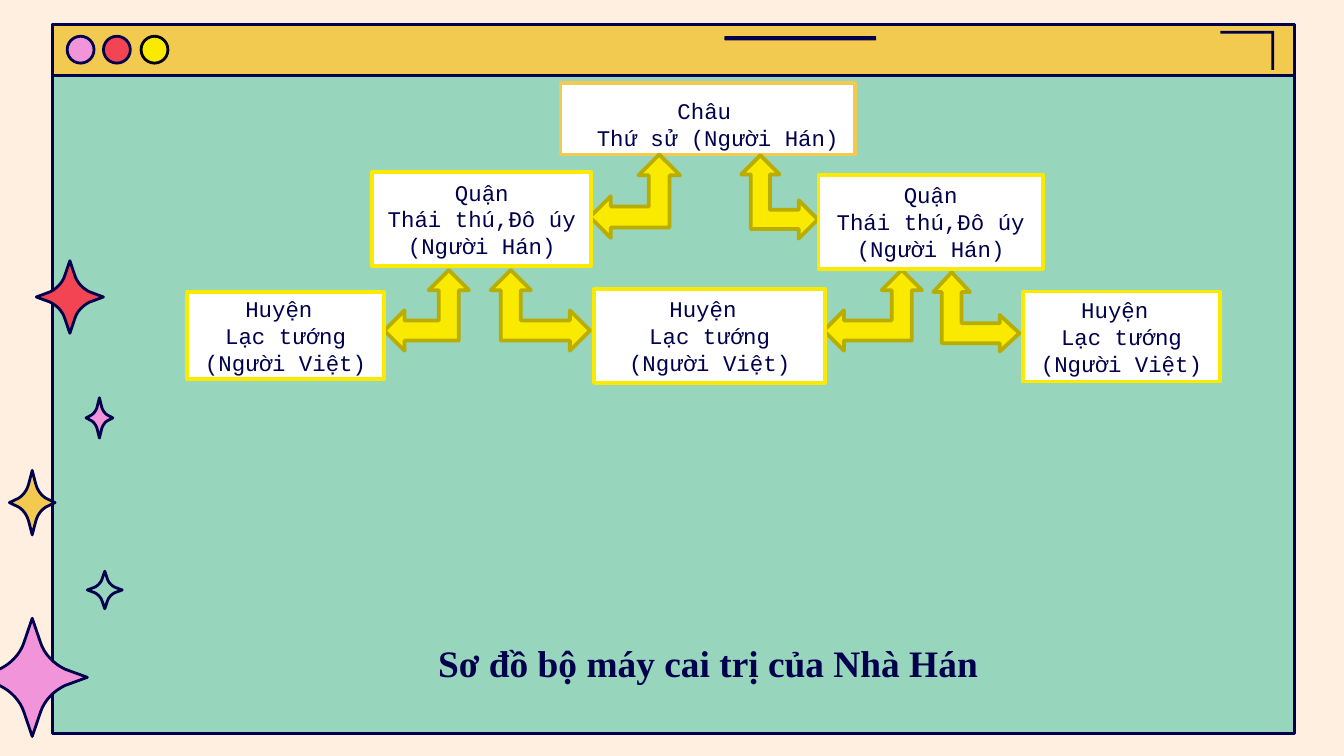
from lxml.etree import SubElement
from pptx import Presentation
from pptx.dml.color import RGBColor
from pptx.enum.shapes import MSO_SHAPE as Preset
from pptx.enum.text import MSO_ANCHOR as Anchor, MSO_AUTO_SIZE as AutoSize, PP_ALIGN as Align
from pptx.oxml.ns import qn
from pptx.util import Inches, Pt

theme = {
    "cream": "FFEFE1", "mint": "97D5BC", "gold": "F3CA50", "navy": "00004D",
    "red": "F24452", "yellow": "FAEA00", "olive": "B9AD00", "pink": "F294D9",
    "white": "FFFFFF", "black": "000000",
    "title": {"name": "Times New Roman", "size": Pt(20), "bold": True},
    "label": {"name": "Courier New", "size": Pt(12), "bold": False},
}


def paint(shape, fill, line=None, width=1.5):
    if hasattr(shape, "shadow"):
        shape.shadow.inherit = False
    if fill:
        shape.fill.solid()
        shape.fill.fore_color.rgb = RGBColor.from_string(theme[fill])
    else:
        shape.fill.background()
    if line:
        shape.line.color.rgb = RGBColor.from_string(theme[line])
        shape.line.width = Pt(width)
    else:
        shape.line.fill.background()


def write(box, lines, style, layout):
    frame = box.text_frame
    for name, value in {"word_wrap": True, "auto_size": AutoSize.NONE, **layout}.items():
        setattr(frame, name, value)
    for number, (text, align) in enumerate(lines):
        para = frame.add_paragraph() if number else frame.paragraphs[0]
        spacing = {"alignment": align, "space_before": Pt(0), "space_after": Pt(0), "line_spacing": 1.0}
        for name, value in spacing.items():
            setattr(para, name, value)
        span = para.add_run()
        span.text = text
        for name, value in theme[style].items():
            setattr(span.font, name, value)
        span.font.color.rgb = RGBColor.from_string(theme["navy"])


deck = Presentation()
deck.slide_width, deck.slide_height = Inches(10), Inches(10) * 9 // 16
page = deck.slides.add_slide(deck.slide_layouts[1])
page.background.fill.solid()
page.background.fill.fore_color.rgb = RGBColor.from_string(theme["cream"])
shapes = page.shapes

window_parts = [
    (Preset.RECTANGLE, (0.39, 0.18, 9.24, 5.28), "mint", "navy"),
    (Preset.RECTANGLE, (0.39, 0.18, 9.24, 0.38), "gold", "navy"),
    (Preset.ROUNDED_RECTANGLE, (5.39, 0.27, 1.13, 0.03), "navy", None),
    (Preset.OVAL, (0.5, 0.27, 0.2, 0.2), "pink", "navy"),
    (Preset.OVAL, (0.77, 0.27, 0.2, 0.2), "red", "navy"),
    (Preset.OVAL, (1.05, 0.27, 0.2, 0.2), "yellow", "black"),
]
for preset, frame, fill, line in window_parts:
    paint(shapes.add_shape(preset, *map(Inches, frame)), fill, line)

corner = [(9.08, 0.23), (9.48, 0.23), (9.48, 0.52), (9.46, 0.52), (9.46, 0.25), (9.08, 0.25)]
outlines = [(corner, "navy", None)]

curve = [(0.15, -0.59), (0.22, -0.39), (0.39, -0.23), (0.59, -0.14)]
weights = [((1 - t) ** 3, 3 * t * (1 - t) ** 2, 3 * t * t * (1 - t), t ** 3)
           for t in (step / 8 for step in range(9))]
bend = [tuple(sum(w * point[axis] for w, point in zip(weight, curve)) for axis in (0, 1))
        for weight in weights]
quarter = [(0, -1), *bend, (1, 0)]
unit_star = []
for sign_x, sign_y, step in ((1, 1, 1), (1, -1, -1), (-1, -1, 1), (-1, 1, -1)):
    unit_star += [(sign_x * x, sign_y * y) for x, y in quarter[::step]]

stars = [
    (0.24, 3.74, 0.17, 0.24, "gold"),
    (0.78, 4.39, 0.13, 0.14, None),
    (0.24, 5.04, 0.41, 0.44, "pink"),
    (0.52, 2.21, 0.25, 0.27, "red"),
    (0.74, 3.11, 0.1, 0.15, "pink"),
]
for center_x, center_y, half_width, half_height, fill in stars:
    points = [(center_x + half_width * x, center_y + half_height * y) for x, y in unit_star]
    outlines.append((points, fill, "navy"))
for points, fill, line in outlines:
    corners = [(Inches(x), Inches(y)) for x, y in points]
    builder = shapes.build_freeform(*corners[0], scale=1.0)
    builder.add_line_segments(corners[1:], close=True)
    paint(builder.convert_to_shape(), fill, line)

title, province = shapes.title, page.placeholders[1]
placeholders = [
    (title, (1.04, 4.66, 8.46, 0.63), "title",
     [("Sơ đồ bộ máy cai trị của Nhà Hán", Align.CENTER)]),
    (province, (4.17, 0.62, 2.19, 0.53), "label",
     [("Châu", Align.LEFT), ("Thứ sử (Người Hán)", Align.LEFT)]),
]
for box, frame, style, lines in placeholders:
    shapes._spTree.append(box._element)
    box.left, box.top, box.width, box.height = map(Inches, frame)
    margins = {f"margin_{side}": Inches(0.1) for side in ("left", "right", "top", "bottom")}
    write(box, lines, style, {"vertical_anchor": Anchor.TOP, **margins})
paint(province, "white", "gold", 2)
for para, indent in zip(province.text_frame.paragraphs, (0.77, 0.17)):
    properties = para._p.get_or_add_pPr()
    properties.set("marL", str(Inches(indent)))
    properties.set("indent", "0")
    SubElement(properties, qn("a:buNone"))

arrows = [
    (4.39, 1.15, 0.67, 0.62, 0, 0.25),
    (5.49, 1.18, 0.62, 0.57, 90, 0.25),
    (2.86, 2.01, 0.63, 0.6, 0, 0.25),
    (3.72, 1.94, 0.6, 0.74, 90, 0.25),
    (6.13, 2.01, 0.73, 0.6, 0, 0.25),
    (6.97, 2, 0.59, 0.64, 90, 0.23),
]
for *frame, rotation, head in arrows:
    arrow = shapes.add_shape(Preset.LEFT_UP_ARROW, *map(Inches, frame))
    arrow.rotation = rotation
    arrow.adjustments[1] = head
    paint(arrow, "yellow", "olive", 2)

commandery = ["Quận", "Thái thú,Đô úy", "(Người Hán)"]
district = ["Huyện ", "Lạc tướng", "(Người Việt)"]
offices = [
    ((2.77, 1.28, 1.63, 0.7), commandery),
    ((6.09, 1.3, 1.67, 0.7), commandery),
    ((1.39, 2.17, 1.47, 0.65), district),
    ((4.42, 2.15, 1.72, 0.7), district),
    ((7.61, 2.17, 1.47, 0.67), district),
]
for frame, lines in offices:
    office = shapes.add_shape(Preset.RECTANGLE, *map(Inches, frame))
    paint(office, "white", "yellow", 2)
    write(office, [(text, Align.CENTER) for text in lines], "label", {"vertical_anchor": Anchor.MIDDLE})

deck.save("out.pptx")
